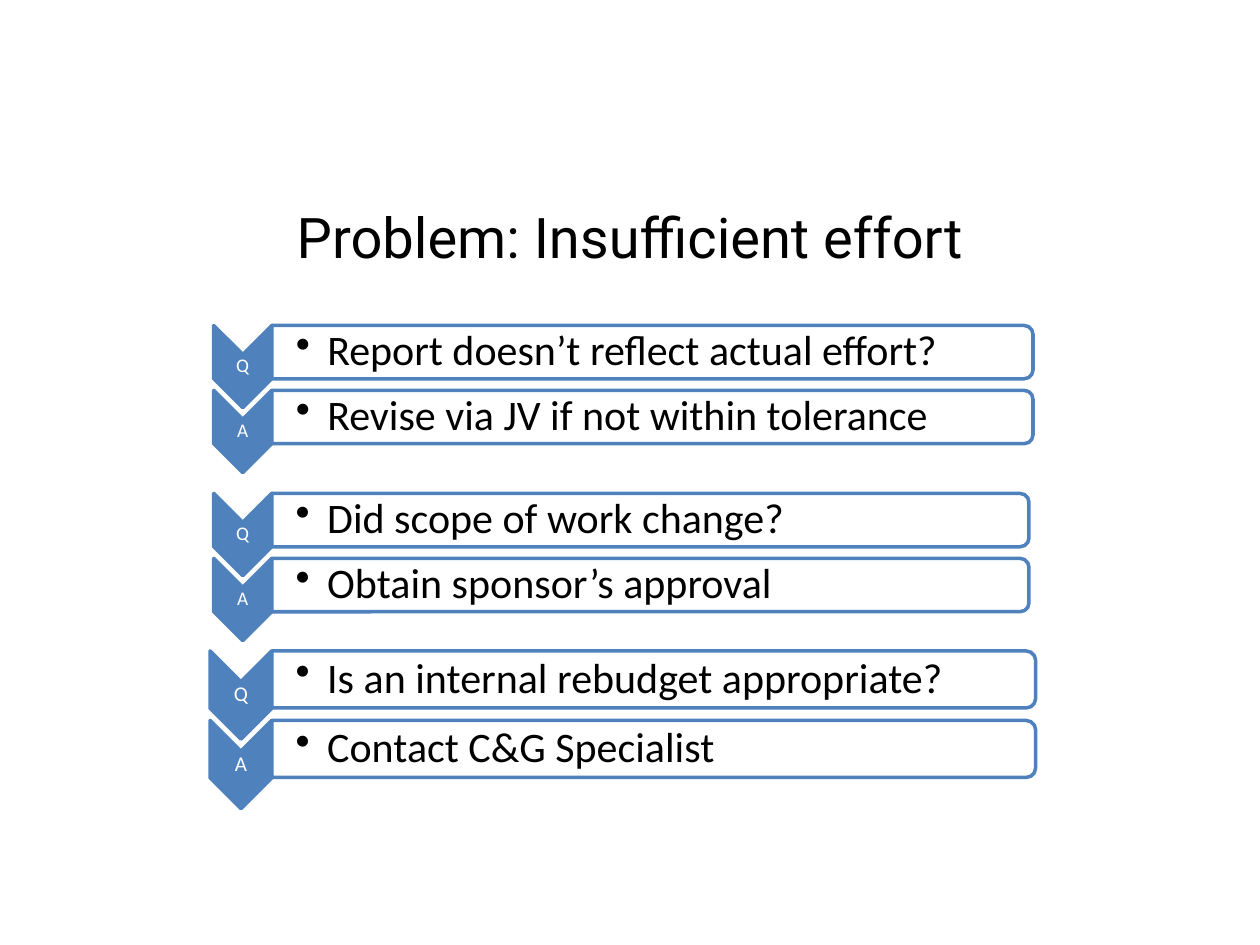
from dataclasses import dataclass
from typing import Any

from lxml import etree
from pptx import Presentation
from pptx.dml.color import RGBColor
from pptx.enum.shapes import MSO_SHAPE
from pptx.enum.text import MSO_ANCHOR, PP_ALIGN
from pptx.oxml.ns import qn
from pptx.util import Pt

CHEVRON = MSO_SHAPE.CHEVRON
ROUNDED_END = MSO_SHAPE.ROUND_2_SAME_RECTANGLE
MIDDLE = MSO_ANCHOR.MIDDLE
CENTER = PP_ALIGN.CENTER

BAR_LEFT = 155.3


def color(value):
    return RGBColor.from_string(value)


@dataclass
class QuestionSlide:
    page: Any
    accent: str = "4F81BD"
    light: str = "FFFFFF"
    dark: str = "000000"
    title_font: str = "Roboto"
    body_font: str = "Calibri"

    def text(self, shapes, frame, words, size, ink, font, insets):
        """Add a vertically centred text box and return its paragraph."""
        box = shapes.add_textbox(*map(Pt, frame))
        text_frame = box.text_frame
        text_frame.word_wrap = True
        text_frame.vertical_anchor = MIDDLE
        text_frame.margin_left = Pt(insets[0])
        text_frame.margin_top = Pt(insets[1])
        text_frame.margin_right = Pt(insets[2])
        text_frame.margin_bottom = Pt(insets[3])
        text_frame.text = words
        para = text_frame.paragraphs[0]
        span = para.runs[0]
        span.font.size = Pt(size)
        span.font.name = font
        span.font.color.rgb = color(ink)
        return para

    def title(self, words):
        para = self.text(self.page.shapes, (36, 90, 648, 90), words, 32,
                         self.dark, self.title_font, (7.2, 3.6, 7.2, 3.6))
        para.alignment = CENTER

    def turned_shape(self, shapes, kind, frame, fill):
        """Add a shape turned by 90 degrees that covers the given frame."""
        left, top, width, height = frame
        shift = (width - height) / 2
        shape = shapes.add_shape(kind, Pt(left + shift), Pt(top - shift),
                                 Pt(height), Pt(width))
        shape.rotation = 90
        shape.shadow.inherit = False
        shape.fill.solid()
        shape.fill.fore_color.rgb = color(fill)
        shape.line.color.rgb = color(self.accent)
        shape.line.width = Pt(2)
        return shape

    def marker(self, shapes, top, width, length, letter, size):
        left = BAR_LEFT - width
        self.turned_shape(shapes, CHEVRON, (left, top, width, length), self.accent)
        label = (left, top + width / 2, width, length - width)
        para = self.text(shapes, label, letter, size, self.light,
                         self.body_font, (0.7,) * 4)
        para.alignment = CENTER
        para.line_spacing = 0.9

    def bar(self, shapes, top, width, height, words):
        shape = self.turned_shape(shapes, ROUNDED_END,
                                  (BAR_LEFT, top, width, height), self.light)
        fill = shape.fill.fore_color._xFill.find(qn("a:srgbClr"))
        etree.SubElement(fill, qn("a:alpha"), val="90000")
        frame = (BAR_LEFT, top + 1.5, width - 1.5, height - 3)
        para = self.text(shapes, frame, words, 24, self.dark,
                         self.body_font, (13.7, 1.2, 1.2, 1.2))
        para.level = 1
        para.line_spacing = 0.9
        properties = para._p.get_or_add_pPr()
        properties.set("marL", str(Pt(18)))
        properties.set("indent", str(-Pt(18)))
        etree.SubElement(properties, qn("a:buChar"), char="•")

    def pair(self, top, pitch, marker_size, bar_size, letter_size, texts):
        """Add a question with its answer below as one group."""
        shapes = self.page.shapes.add_group_shape().shapes
        for row, (letter, words) in enumerate(zip("QA", texts)):
            row_top = top + row * pitch
            self.marker(shapes, row_top, *marker_size, letter, letter_size)
            self.bar(shapes, row_top, *bar_size, words)


def main():
    deck = Presentation()
    deck.slide_width, deck.slide_height = Pt(720), Pt(540)
    slide = QuestionSlide(deck.slides.add_slide(deck.slide_layouts[6]))

    # Heading
    slide.title("Problem: Insufficient effort")

    # Questions and answers
    small, large = (33.2, 47), (35.3, 50.4)
    slide.pair(186, 37.1, small, (435, 30.5), 11,
               ("Report doesn’t reflect actual effort?",
                "Revise via JV if not within tolerance"))
    slide.pair(282, 37.1, small, (432.7, 30.5), 11,
               ("Did scope of work change?", "Obtain sponsor’s approval"))
    slide.pair(372, 39.7, large, (436.5, 32.6), 12,
               ("Is an internal rebudget appropriate?", "Contact C&G Specialist"))

    deck.save("out.pptx")


if __name__ == "__main__":
    main()
